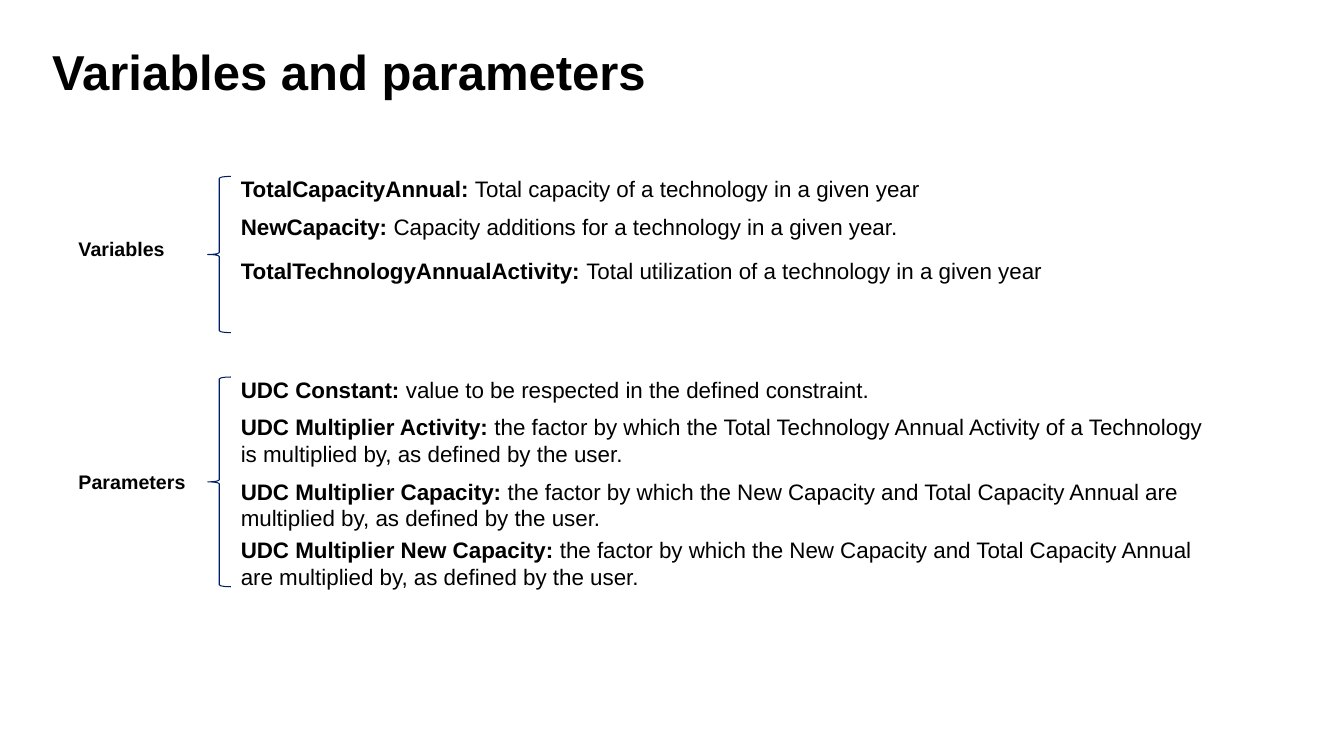
from pptx import Presentation
from pptx.dml.color import RGBColor
from pptx.enum import shapes, text
from pptx.util import Pt

COLORS = {"text": "000000", "brace": "001D68"}
FONT = "Arial"

# Each entry: offset from the top of the group, height, term, definition
VARIABLES = [
    (-4.3, 26.6, "TotalCapacityAnnual: ",
     "Total capacity of a technology in a given year"),
    (22.7, 26.6, "NewCapacity: ",
     "Capacity additions for a technology in a given year."),
    (54, 26.6, "TotalTechnologyAnnualActivity: ",
     "Total utilization of a technology in a given year"),
]
PARAMETERS = [
    (-4.3, 26.6, "UDC Constant: ",
     "value to be respected in the defined constraint."),
    (22.3, 46, "UDC Multiplier Activity: ",
     "the factor by which the Total Technology Annual Activity of a Technology "
     "is multiplied by, as defined by the user."),
    (68.4, 46, "UDC Multiplier Capacity: ",
     "the factor by which the New Capacity and Total Capacity Annual are "
     "multiplied by, as defined by the user."),
    (110.2, 46, "UDC Multiplier New Capacity: ",
     "the factor by which the New Capacity and Total Capacity Annual are "
     "multiplied by, as defined by the user."),
]


def add_text(slide, box, runs, size, anchor=text.MSO_ANCHOR.TOP):
    """Add a one-paragraph text box; runs are (words, bold) pairs."""
    frame = slide.shapes.add_textbox(*map(Pt, box)).text_frame
    frame.word_wrap = True
    frame.vertical_anchor = anchor
    paragraph = frame.paragraphs[0]
    for words, bold in runs:
        run = paragraph.add_run()
        run.text = words
        run.font.name = FONT
        run.font.size = Pt(size)
        run.font.bold = bold
        run.font.color.rgb = RGBColor.from_string(COLORS["text"])


def add_title(slide, box, title):
    add_text(slide, box, [(title, True)], 35, text.MSO_ANCHOR.MIDDLE)


def add_group(slide, box, label, label_offset, label_width, entries):
    """Place a label, a brace as tall as the box, and its definitions."""
    left, top, width, height = box
    brace_left, brace_width = left + 99.4, 16.5
    entry_left = brace_left + brace_width

    # Label
    add_text(slide, (left, top + label_offset, label_width, 24.2),
             [(label, True)], 14)

    # Brace
    brace = slide.shapes.add_shape(
        shapes.MSO_SHAPE.LEFT_BRACE,
        *map(Pt, (brace_left, top, brace_width, height)))
    brace.shadow.inherit = False
    brace.fill.background()
    brace.line.color.rgb = RGBColor.from_string(COLORS["brace"])
    brace.line.width = Pt(0.75)

    # Definitions
    for offset, entry_height, term, definition in entries:
        add_text(slide,
                 (entry_left, top + offset, left + width - entry_left, entry_height),
                 [(term, True), (definition, False)], 16)


def main():
    presentation = Presentation()
    presentation.slide_width, presentation.slide_height = Pt(960), Pt(540)
    slide = presentation.slides.add_slide(presentation.slide_layouts[6])

    add_title(slide, (30.2, 31, 846.7, 38.9), "Variables and parameters")
    add_group(slide, (49, 126, 827.3, 111.6), "Variables", 39.6, 76.3, VARIABLES)
    add_group(slide, (49, 269.3, 827.3, 149.8), "Parameters", 62.6, 91.4, PARAMETERS)

    presentation.save("out.pptx")


if __name__ == "__main__":
    main()
